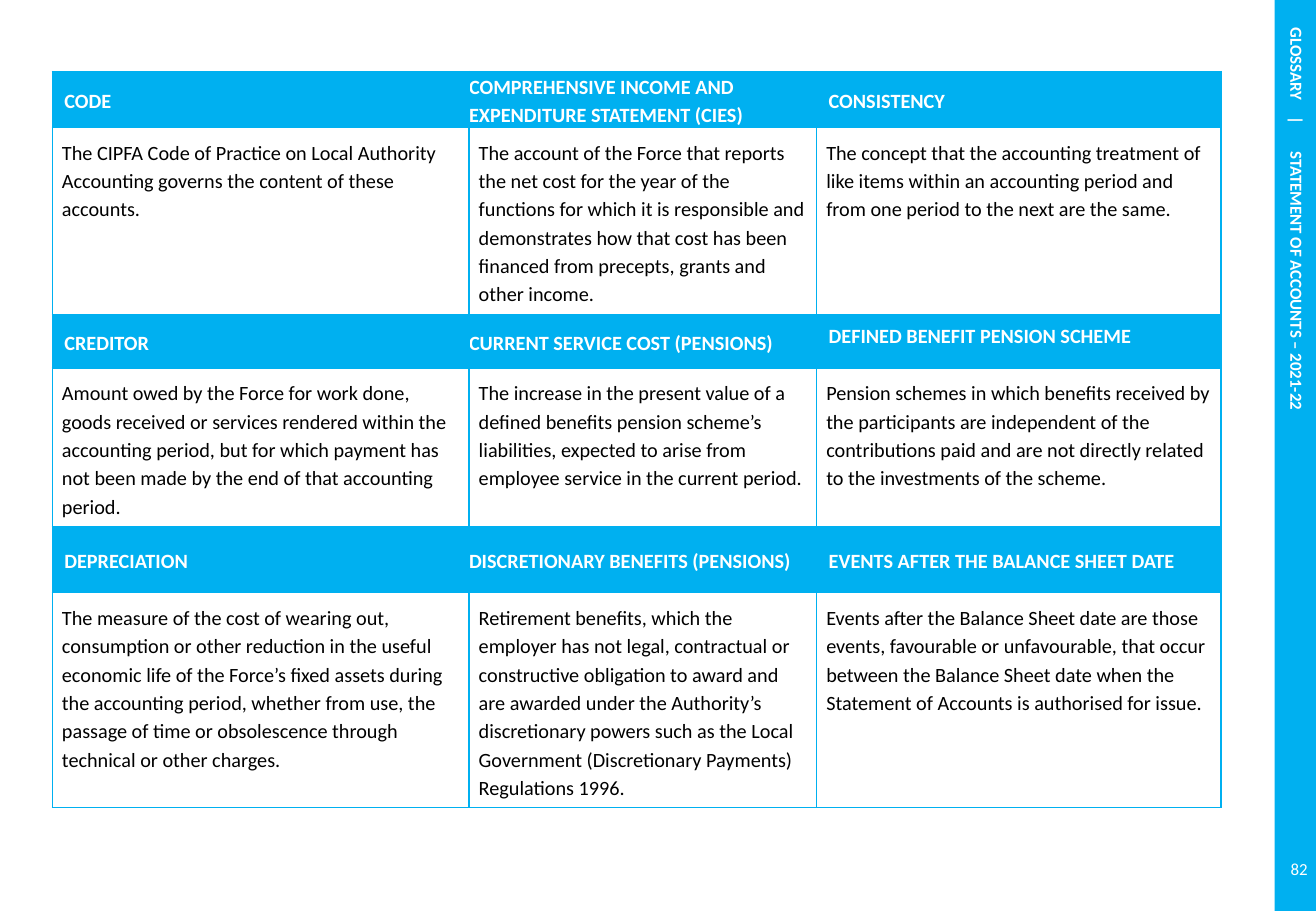
from lxml.etree import SubElement
from pptx import Presentation
from pptx.dml.color import RGBColor
from pptx.enum.shapes import MSO_SHAPE
from pptx.enum.text import MSO_ANCHOR, PP_ALIGN
from pptx.oxml.ns import qn
from pptx.util import Inches, Pt

BLUE, WHITE, BLACK = "00B0F0", "FFFFFF", "000000"
SIDEBAR_LEFT, SIDEBAR_WIDTH = 10.49, 0.37
COLUMN_WIDTHS = [3.43, 2.86, 3.33]
ROW_HEIGHTS = [0.46, 1.54, 0.44, 1.3, 0.54, 1.76]

GLOSSARY = [
    [
        ("CODE",
         "The CIPFA Code of Practice on Local Authority Accounting governs the "
         "content of these accounts."),
        ("COMPREHENSIVE INCOME AND EXPENDITURE STATEMENT (CIES)",
         "The account of the Force that reports the net cost for the year of the "
         "functions for which it is responsible and demonstrates how that cost has "
         "been financed from precepts, grants and other income."),
        ("CONSISTENCY",
         "The concept that the accounting treatment of like items within an "
         "accounting period and from one period to the next are the same."),
    ],
    [
        ("CREDITOR",
         "Amount owed by the Force for work done, goods received or services "
         "rendered within the accounting period, but for which payment has not been "
         "made by the end of that accounting period."),
        ("CURRENT SERVICE COST (PENSIONS)",
         "The increase in the present value of a defined benefits pension scheme’s "
         "liabilities, expected to arise from employee service in the current period."),
        ("DEFINED BENEFIT PENSION SCHEME",
         "Pension schemes in which benefits received by the participants are "
         "independent of the contributions paid and are not directly related to the "
         "investments of the scheme."),
    ],
    [
        ("DEPRECIATION",
         "The measure of the cost of wearing out, consumption or other reduction in "
         "the useful economic life of the Force’s fixed assets during the accounting "
         "period, whether from use, the passage of time or obsolescence through "
         "technical or other charges."),
        ("DISCRETIONARY BENEFITS (PENSIONS)",
         "Retirement benefits, which the employer has not legal, contractual or "
         "constructive obligation to award and are awarded under the Authority’s "
         "discretionary powers such as the Local Government (Discretionary Payments) "
         "Regulations 1996."),
        ("EVENTS AFTER THE BALANCE SHEET DATE",
         "Events after the Balance Sheet date are those events, favourable or "
         "unfavourable, that occur between the Balance Sheet date when the Statement "
         "of Accounts is authorised for issue."),
    ],
]


def rgb(value):
    return RGBColor.from_string(value)


def set_all(target, values):
    for name, value in values.items():
        setattr(target, name, value)


class GlossarySlide:
    """Holds the text style and the slide being built."""

    font_name = "Calibri"
    table_paragraph = {"line_spacing": 1.15, "space_after": Pt(10)}

    def __init__(self, presentation):
        self.slide = presentation.slides.add_slide(presentation.slide_layouts[6])

    def set_text(self, paragraph, text, size, color, bold=False, **layout):
        paragraph.text = text
        set_all(paragraph, layout)
        set_all(paragraph.runs[0].font,
                {"name": self.font_name, "size": Pt(size), "bold": bold})
        paragraph.runs[0].font.color.rgb = rgb(color)

    def sidebar(self, parts, tab_stops):
        """Draws the blue band with its text turned down the page."""
        shape = self.slide.shapes.add_shape(
            MSO_SHAPE.RECTANGLE, Inches(SIDEBAR_LEFT), Inches(-0.01),
            Inches(SIDEBAR_WIDTH), Inches(7.52))
        shape.shadow.inherit = False
        shape.fill.solid()
        shape.fill.fore_color.rgb = rgb(BLUE)
        shape.line.fill.background()
        frame = shape.text_frame
        frame.vertical_anchor = MSO_ANCHOR.MIDDLE
        frame._txBody.bodyPr.set("vert", "vert")
        paragraph = frame.paragraphs[0]
        tabs = SubElement(paragraph._p.get_or_add_pPr(), qn("a:tabLst"))
        for stop in tab_stops:
            SubElement(tabs, qn("a:tab"), pos=str(Inches(stop)), algn="l")
        text = "".join("\t" + part for part in parts)
        self.set_text(paragraph, text, 10, WHITE, True, alignment=PP_ALIGN.LEFT)

    def page_number(self, number):
        frame = self.slide.shapes.add_textbox(
            Inches(SIDEBAR_LEFT), Inches(6.95),
            Inches(SIDEBAR_WIDTH), Inches(0.4)).text_frame
        set_all(frame, {"word_wrap": True, "vertical_anchor": MSO_ANCHOR.MIDDLE})
        self.set_text(frame.paragraphs[0], number, 10, WHITE,
                      alignment=PP_ALIGN.RIGHT)

    def borders(self, cell):
        properties = cell._tc.get_or_add_tcPr()
        for side in ("lnL", "lnR", "lnT", "lnB"):
            line = SubElement(properties, qn(f"a:{side}"), w=str(Pt(1)))
            fill = SubElement(line, qn("a:solidFill"))
            SubElement(fill, qn("a:srgbClr"), val=BLUE)

    def cell(self, cell, text, color, bold, anchor, across, down):
        """Fills in one cell, with side margins across and margins down in inches."""
        self.borders(cell)
        set_all(cell, {"vertical_anchor": anchor,
                       "margin_left": Inches(across), "margin_right": Inches(across),
                       "margin_top": Inches(down), "margin_bottom": Inches(down)})
        self.set_text(cell.text_frame.paragraphs[0], text, 12, color, bold,
                      **self.table_paragraph)

    def term(self, cell, text, column, anchor):
        across, down = (0, 0) if column == 1 else (0.1, 0.05)
        self.cell(cell, text, WHITE, True, anchor, across, down)
        cell.fill.solid()
        cell.fill.fore_color.rgb = rgb(BLUE)

    def definition(self, cell, text):
        self.cell(cell, text, BLACK, False, MSO_ANCHOR.TOP, 0.08, 0.08)
        cell.fill.background()

    def glossary_table(self, groups, top_anchored):
        table = self.slide.shapes.add_table(
            len(ROW_HEIGHTS), len(COLUMN_WIDTHS), Inches(0.43), Inches(0.59),
            Inches(sum(COLUMN_WIDTHS)), Inches(sum(ROW_HEIGHTS))).table
        set_all(table, {"first_row": False, "horz_banding": False})
        for column, width in zip(table.columns, COLUMN_WIDTHS):
            column.width = Inches(width)
        for row, height in zip(table.rows, ROW_HEIGHTS):
            row.height = Inches(height)
        for group_index, group in enumerate(groups):
            for column, (term, definition) in enumerate(group):
                anchor = MSO_ANCHOR.TOP if term in top_anchored else MSO_ANCHOR.MIDDLE
                self.term(table.cell(2 * group_index, column), term, column, anchor)
                self.definition(table.cell(2 * group_index + 1, column), definition)


def main():
    presentation = Presentation()
    set_all(presentation, {"slide_width": Inches(10.83), "slide_height": Inches(7.5)})
    page = GlossarySlide(presentation)
    page.sidebar(["GLOSSARY", "|", "STATEMENT OF ACCOUNTS – 2021-22"],
                 tab_stops=[0.14, 0.87, 1.16])
    page.page_number("82")
    page.glossary_table(GLOSSARY, top_anchored={"DEFINED BENEFIT PENSION SCHEME"})
    presentation.save("out.pptx")


if __name__ == "__main__":
    main()
